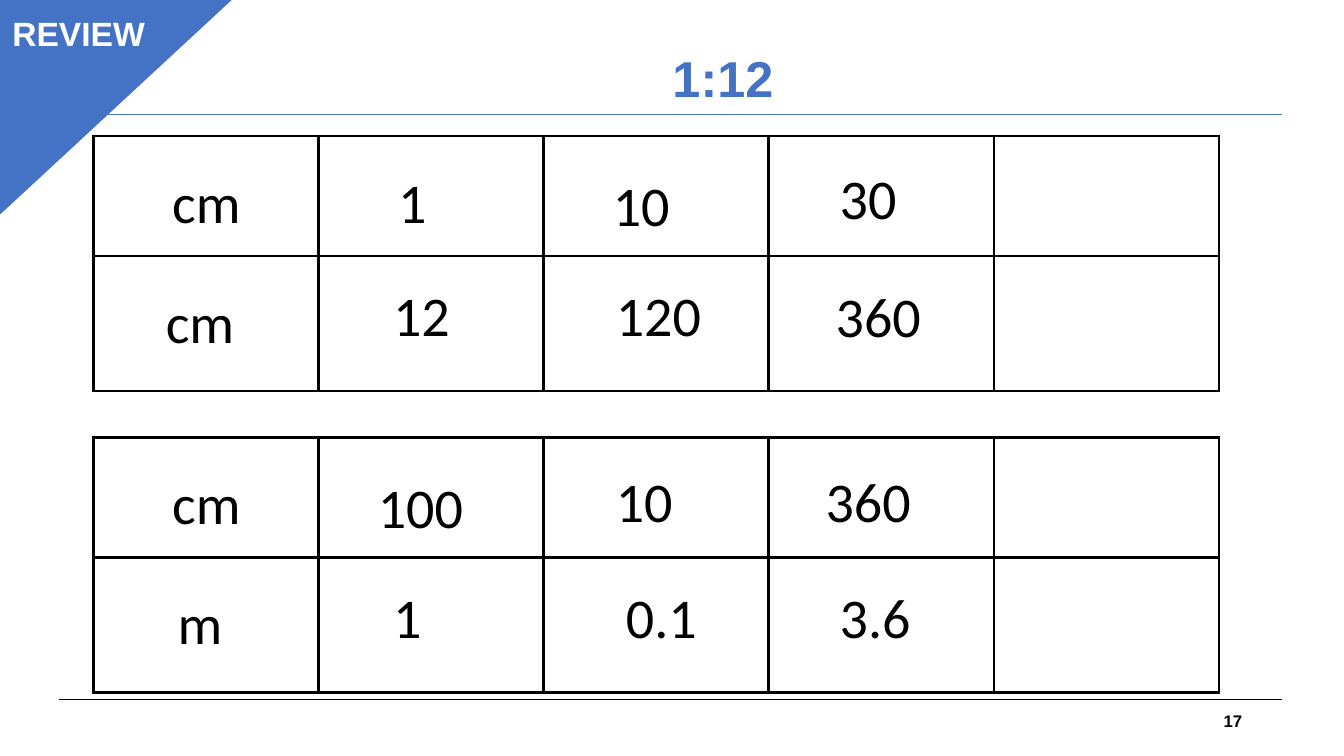
from dataclasses import dataclass

from lxml import etree
from pptx import Presentation
from pptx.dml.color import RGBColor
from pptx.enum.shapes import MSO_CONNECTOR, MSO_SHAPE
from pptx.enum.text import MSO_ANCHOR, MSO_AUTO_SIZE, PP_ALIGN
from pptx.oxml.ns import qn
from pptx.util import Inches, Pt

STRAIGHT = MSO_CONNECTOR.STRAIGHT
TRIANGLE, RECTANGLE = MSO_SHAPE.ISOSCELES_TRIANGLE, MSO_SHAPE.RECTANGLE
LEFT, CENTER, RIGHT = PP_ALIGN.LEFT, PP_ALIGN.CENTER, PP_ALIGN.RIGHT
TOP, MIDDLE = MSO_ANCHOR.TOP, MSO_ANCHOR.MIDDLE


@dataclass(frozen=True)
class Theme:
    blue: RGBColor = RGBColor(0x44, 0x72, 0xC4)
    black: RGBColor = RGBColor(0, 0, 0)
    white: RGBColor = RGBColor(255, 255, 255)
    heading_font: str = "Arial"
    body_font: str = "Calibri"
    value_size: int = 40
    title_size: int = 36
    label_size: int = 24
    number_size: int = 12


theme = Theme()


def write_text(text_frame, text, font, size, color, alignment=LEFT, bold=False):
    text_frame.word_wrap = True
    paragraph = text_frame.paragraphs[0]
    paragraph.alignment = alignment
    run = paragraph.add_run()
    run.text = text
    run.font.color.rgb = color
    for name, value in {"name": font, "size": Pt(size), "bold": bold}.items():
        setattr(run.font, name, value)
    return paragraph


def add_border(cell, color, width):
    properties = cell._tc.get_or_add_tcPr()
    for side in ("lnL", "lnR", "lnT", "lnB"):
        line = etree.SubElement(properties, qn(f"a:{side}"), w=str(Pt(width)))
        fill = etree.SubElement(line, qn("a:solidFill"))
        etree.SubElement(fill, qn("a:srgbClr"), val=str(color))


presentation = Presentation()
presentation.slide_width = Inches(13.33)
presentation.slide_height = Inches(7.5)
slide = presentation.slides.add_slide(presentation.slide_layouts[5])
shapes = slide.shapes

for y, color in ((6.94, theme.black), (1.14, theme.blue)):
    rule = shapes.add_connector(STRAIGHT, Inches(0.59), Inches(y), Inches(12.72), Inches(y))
    rule.line.color.rgb = color
    rule.line.width = Pt(0.75)
    etree.SubElement(rule._element.spPr, qn("a:effectLst"))

page_number = shapes.add_textbox(Inches(9.42), Inches(6.95), Inches(3), Inches(0.4))
page_number.text_frame.vertical_anchor = MIDDLE
write_text(page_number.text_frame, "17", theme.heading_font, theme.number_size,
           theme.black, RIGHT, True)

ratio_tables = (
    (1.35, ("cm", "cm "), (
        ("1", 3.85, 1.61, 1.1), ("12", 3.8, 2.73, 0.95), ("10", 5.98, 1.64, 1.07),
        ("30", 8.23, 1.57, 0.79), ("360", 8.19, 2.74, 1.07), ("120", 6.01, 2.73, 1.17))),
    (4.34, ("cm", "m "), (
        ("100", 3.65, 4.64, 1.1), ("1", 3.8, 5.73, 0.95), ("10", 6.01, 4.58, 1.07),
        ("0.1", 6.11, 5.73, 0.95), ("360", 8.09, 4.58, 1.07), ("3.6", 8.23, 5.73, 1.52))),
)
cell_format = {"margin_left": Inches(0.07), "margin_right": Inches(0.07),
               "margin_top": 0, "margin_bottom": 0, "vertical_anchor": TOP}

for top, units, values in ratio_tables:
    table = shapes.add_table(2, 5, Inches(0.93), Inches(top), Inches(11.16), Inches(2.53)).table
    table.first_row = table.horz_banding = False
    for row, height in zip(table.rows, (1.19, 1.34)):
        row.height = Inches(height)
    for cell in table.iter_cells():
        for name, value in cell_format.items():
            setattr(cell, name, value)
        add_border(cell, theme.black, 2.25)
        cell.fill.background()
    for row_index, unit in enumerate(units):
        paragraph = write_text(table.cell(row_index, 0).text_frame, unit, theme.body_font,
                               theme.value_size, theme.black, CENTER)
        paragraph.line_spacing = 1.5
        paragraph.space_after = Pt(8)
    for text, x, y, width in values:
        value_box = shapes.add_textbox(Inches(x), Inches(y), Inches(width), Inches(0.77))
        value_box.text_frame.auto_size = MSO_AUTO_SIZE.SHAPE_TO_FIT_TEXT
        write_text(value_box.text_frame, text, theme.body_font, theme.value_size, theme.black)

corner = shapes.add_shape(TRIANGLE, Inches(0), Inches(-0.02), Inches(2.31), Inches(2.14))
corner.adjustments[0] = 0
corner._element.spPr.xfrm.set("flipV", "1")
label = shapes.add_shape(RECTANGLE, Inches(0.01), Inches(0.08), Inches(1.54), Inches(0.5))
for shape, line_width in ((corner, 1), (label, 0.75)):
    shape.shadow.inherit = False
    shape.fill.solid()
    shape.fill.fore_color.rgb = theme.blue
    shape.line.color.rgb = theme.blue
    shape.line.width = Pt(line_width)
label.text_frame.vertical_anchor = TOP
write_text(label.text_frame, "REVIEW", theme.heading_font, theme.label_size,
           theme.white, CENTER, True)

title = shapes.title
title_place = {"left": 2.17, "top": 0.25, "width": 10, "height": 1.11}
for name, value in title_place.items():
    setattr(title, name, Inches(value))
title.text_frame.vertical_anchor = MIDDLE
paragraph = write_text(title.text_frame, "1:12", theme.heading_font, theme.title_size,
                       theme.blue, CENTER, True)
paragraph.line_spacing = 0.9

presentation.save("out.pptx")
